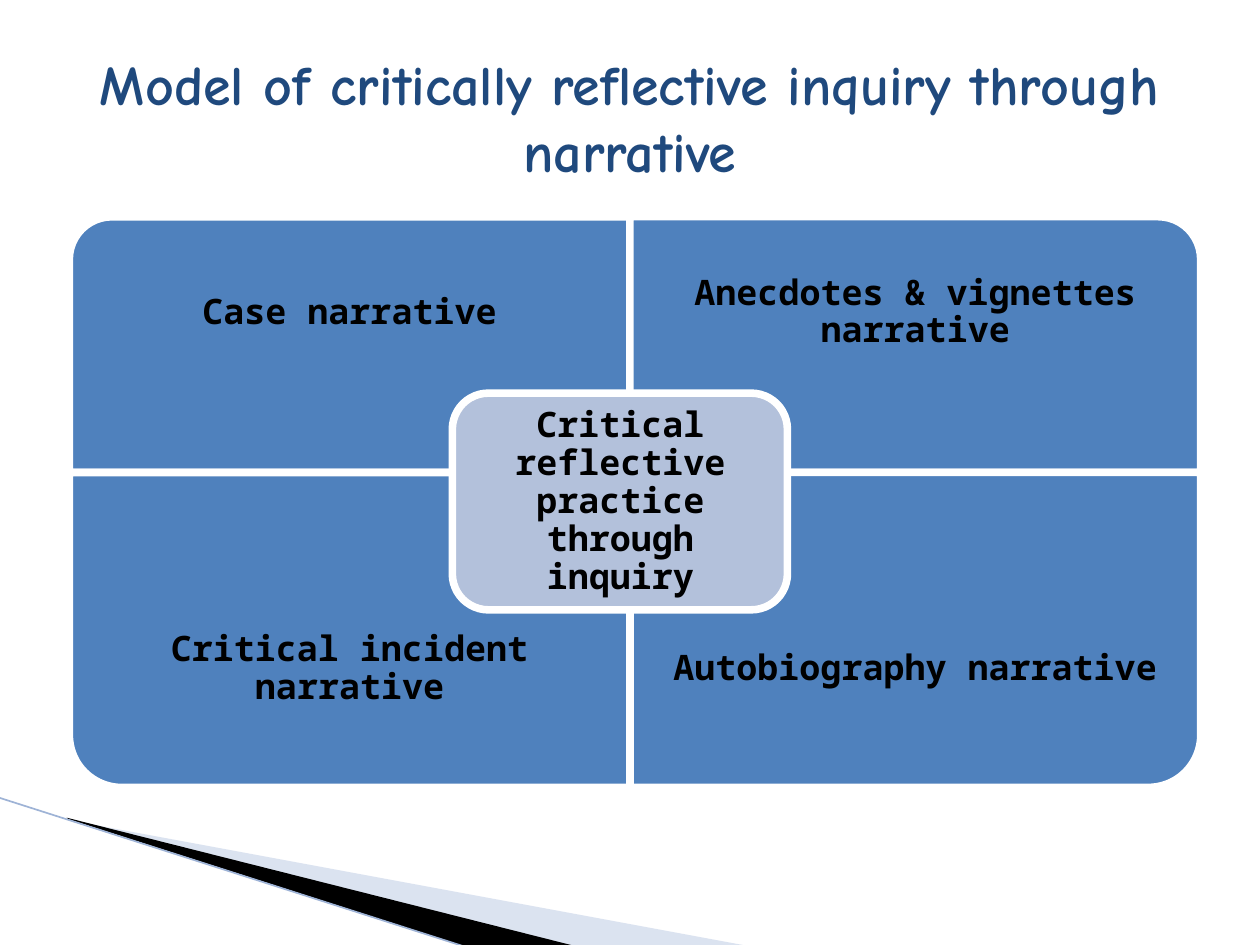
from dataclasses import dataclass

from lxml import etree
from pptx import Presentation
from pptx.dml.color import RGBColor
from pptx.enum.shapes import MSO_CONNECTOR, MSO_SHAPE
from pptx.enum.text import MSO_ANCHOR, PP_ALIGN
from pptx.oxml.ns import qn
from pptx.util import Pt

PX = 9144  # EMU per px, 100 px to the inch
ROUND_ONE = MSO_SHAPE.ROUND_1_RECTANGLE
ROUND_ALL = MSO_SHAPE.ROUNDED_RECTANGLE
STRAIGHT = MSO_CONNECTOR.STRAIGHT
CENTER = PP_ALIGN.CENTER
MIDDLE = MSO_ANCHOR.MIDDLE


@dataclass(frozen=True)
class Theme:
    title_font: str = "Comic Neue"
    label_font: str = "Noto Sans Mono"
    title_size: int = 32
    label_size: int = 20
    border: float = 4.33
    hairline: float = 0.95
    title: str = "1F497D"
    text: str = "000000"
    panel: str = "4F81BD"
    center: str = "B3C1DB"
    gap: str = "FFFFFF"
    pale_band: str = "A7B9DB"
    dark_band: str = "000000"
    edge: str = "9EB3D6"


def emu(*lengths):
    return [round(length * PX) for length in lengths]


def rgb(color):
    return RGBColor.from_string(color)


class Canvas:
    def __init__(self, slide, theme):
        self.slide = slide
        self.theme = theme

    def set_text(self, tf, text, font, size, color):
        tf.word_wrap = True
        tf.vertical_anchor = MIDDLE
        p = tf.paragraphs[0]
        p.text = text
        p.alignment = CENTER
        for r in p.runs:
            r.font.name = font
            r.font.size = Pt(size)
            r.font.bold = True
            r.font.color.rgb = rgb(color)
        return p

    def title(self, text, *box):
        t = self.theme
        sp = self.slide.shapes.title
        sp.left, sp.top, sp.width, sp.height = emu(*box)
        self.set_text(sp.text_frame, text, t.title_font, t.title_size, t.title)

    def panel(self, kind, color, x, y, w, h, rotation=0):
        """Draw a bordered panel that covers the box after its rotation."""
        if rotation % 180:
            x, y, w, h = x + (w - h) / 2, y + (h - w) / 2, h, w
        sp = self.slide.shapes.add_shape(kind, *emu(x, y, w, h))
        sp.rotation = rotation
        sp.shadow.inherit = False
        sp.fill.solid()
        sp.fill.fore_color.rgb = rgb(color)
        sp.line.color.rgb = rgb(self.theme.gap)
        sp.line.width = Pt(self.theme.border)

    def label(self, text, box, inset):
        t = self.theme
        tf = self.slide.shapes.add_textbox(*emu(*box)).text_frame
        tf.margin_left = tf.margin_right = inset * PX
        tf.margin_top = tf.margin_bottom = inset * PX
        p = self.set_text(tf, text, t.label_font, t.label_size, t.text)
        p.line_spacing = 0.9

    def band(self, color, points, opacity=100):
        builder = self.slide.shapes.build_freeform(*points[0], scale=PX)
        builder.add_line_segments(points[1:], close=True)
        sp = builder.convert_to_shape()
        sp.shadow.inherit = False
        sp.fill.solid()
        sp.fill.fore_color.rgb = rgb(color)
        sp.line.fill.background()
        if opacity < 100:
            clr = next(sp.element.spPr.iter(qn("a:srgbClr")))
            etree.SubElement(clr, qn("a:alpha"), val=str(opacity * 1000))

    def line(self, *ends):
        cxn = self.slide.shapes.add_connector(STRAIGHT, *emu(*ends))
        cxn.line.color.rgb = rgb(self.theme.edge)
        cxn.line.width = Pt(self.theme.hairline)
        etree.SubElement(cxn.element.spPr, qn("a:effectLst"))


def add_swoosh(canvas):
    t = canvas.theme
    canvas.band(t.pale_band, [(55, 651), (595, 751), (456, 751), (55, 650)], 40)
    canvas.band(t.dark_band, [(53, 649), (457, 751), (372, 752), (54, 650)])
    canvas.line(-1, 633, 371, 752)


def add_matrix(canvas):
    """Four panels, each rounded at its outer corner, around a centre box."""
    t = canvas.theme
    columns = [(55, 445), (500, 453)]
    rows = [(172, 203), (375, 250)]
    quadrants = [
        ("Case narrative", 0, 0, 270),
        ("Anecdotes & vignettes narrative", 0, 1, 0),
        ("Critical incident narrative", 1, 0, 180),
        ("Autobiography narrative", 1, 1, 90),
    ]
    for text, row, column, rotation in quadrants:
        x, w = columns[column]
        y, h = rows[row]
        canvas.panel(ROUND_ONE, t.panel, x, y, w, h, rotation)
        # The label takes the outer three quarters, clear of the centre box
        canvas.label(text, (x, y + row * h / 4, w, h * 3 / 4), 11)
    canvas.panel(ROUND_ALL, t.center, 359, 312, 266, 172)
    canvas.label("Critical reflective practice through inquiry",
                 (366, 321, 253, 155), 6)


def main():
    prs = Presentation()
    prs.slide_width, prs.slide_height = emu(1000, 750)
    title_only = prs.slide_layouts[5]
    canvas = Canvas(prs.slides.add_slide(title_only), Theme())
    add_swoosh(canvas)
    canvas.title("Model of critically reflective inquiry through narrative",
                 50, 30, 900, 125)
    add_matrix(canvas)
    prs.save("out.pptx")


if __name__ == "__main__":
    main()
